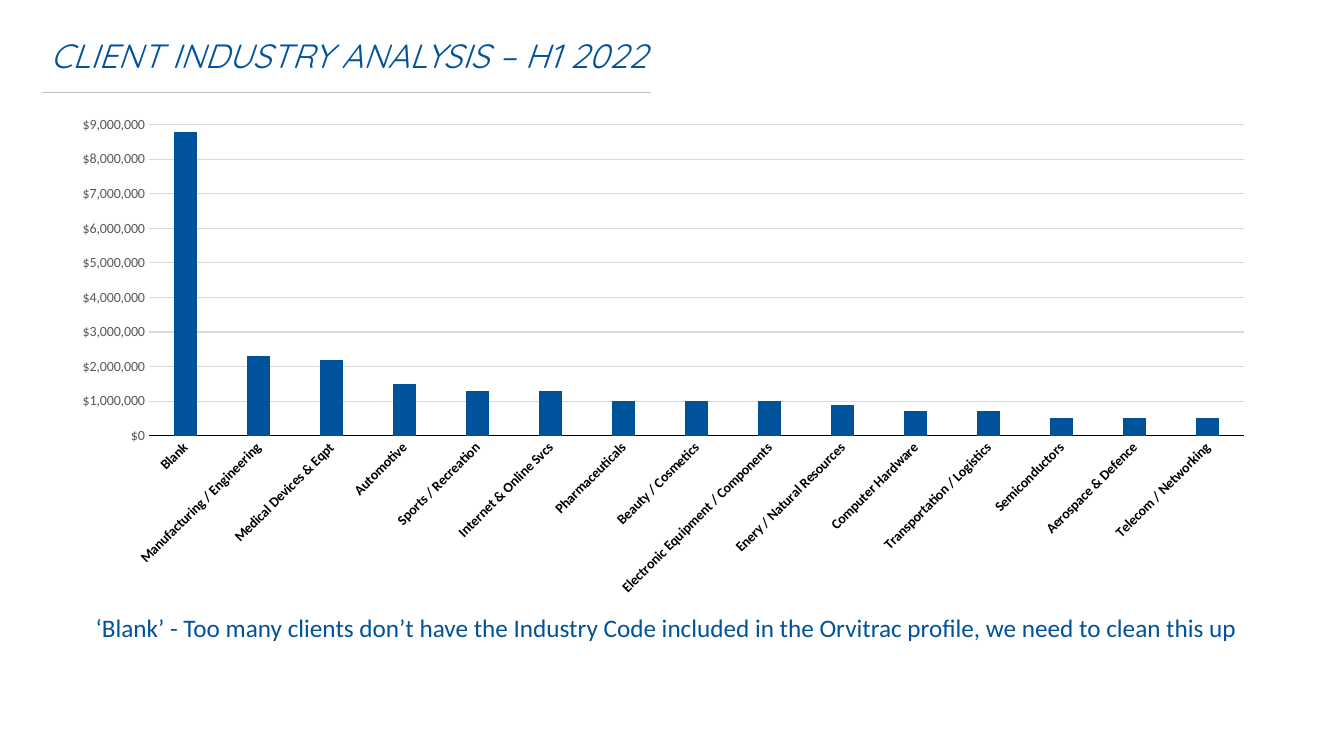
from dataclasses import dataclass
from typing import Any

import pptx
import pptx.chart.data
import pptx.dml.color
import pptx.enum.chart
import pptx.enum.shapes
import pptx.enum.text
import pptx.oxml.ns
import pptx.util
from pptx.util import Inches

COLORS = {
    "brand": "00529A",
    "rule": "BFBFBF",
    "grid": "D9D9D9",
    "amount": "595959",
    "ink": "000000",
}

REVENUE = {
    "Blank": 8800000,
    "Manufacturing / Engineering": 2300000,
    "Medical Devices & Eqpt": 2200000,
    "Automotive": 1500000,
    "Sports / Recreation": 1300000,
    "Internet & Online Svcs": 1300000,
    "Pharmaceuticals": 1000000,
    "Beauty / Cosmetics": 1000000,
    "Electronic Equipment / Components": 1000000,
    "Enery / Natural Resources": 900000,
    "Computer Hardware": 700000,
    "Transportation / Logistics": 700000,
    "Semiconductors": 500000,
    "Aerospace & Defence": 500000,
    "Telecom / Networking": 500000,
}


@dataclass(frozen=True)
class Caption:
    text: str
    at: tuple[float, float, float, float]
    font: dict[str, Any]
    frame: dict[str, Any]
    hanging: float = 0


CAPTIONS = [
    Caption(
        "CLIENT INDUSTRY ANALYSIS – H1 2022",
        (0.5, 0.33, 6.25, 0.42),
        {"name": "Quicksand", "size": pptx.util.Pt(24), "italic": True},
        {
            "word_wrap": True,
            "vertical_anchor": pptx.enum.text.MSO_ANCHOR.BOTTOM,
            "margin_left": 0,
            "margin_top": 0,
            "margin_right": 0,
            "margin_bottom": 0,
        },
        0.38,
    ),
    Caption(
        "‘Blank’ - Too many clients don’t have the Industry Code included "
        "in the Orvitrac profile, we need to clean this up",
        (0.85, 6.03, 11.73, 0.4),
        {"name": "Calibri", "size": pptx.util.Pt(18)},
        {
            "word_wrap": False,
            "auto_size": pptx.enum.text.MSO_AUTO_SIZE.SHAPE_TO_FIT_TEXT,
        },
    ),
]


def apply_format(target: Any, values: dict[str, Any]) -> None:
    for name, value in values.items():
        setattr(target, name, value)


def rgb(name: str) -> pptx.dml.color.RGBColor:
    return pptx.dml.color.RGBColor.from_string(COLORS[name])


def style_font(font: Any, color: str, values: dict[str, Any]) -> None:
    apply_format(font, values)
    font.color.rgb = rgb(color)


def style_line(line: Any, color: str, points: float) -> None:
    line.color.rgb = rgb(color)
    line.width = pptx.util.Pt(points)


def add_caption(slide: Any, caption: Caption) -> None:
    frame = slide.shapes.add_textbox(*map(Inches, caption.at)).text_frame
    apply_format(frame, caption.frame)
    paragraph = frame.paragraphs[0]
    if caption.hanging:
        properties = paragraph._p.get_or_add_pPr()
        properties.set("marL", str(Inches(caption.hanging)))
        properties.set("indent", str(-Inches(caption.hanging)))
    run = paragraph.add_run()
    run.text = caption.text
    style_font(run.font, "brand", caption.font)


def add_title_rule(slide: Any) -> None:
    rule = slide.shapes.add_connector(
        pptx.enum.shapes.MSO_CONNECTOR.STRAIGHT,
        *map(Inches, (0.42, 0.92, 6.46, 0.92)),
    )
    style_line(rule.line, "rule", 0.75)
    rule._element.spPr.append(pptx.oxml.parse_xml(
        f"<a:effectLst {pptx.oxml.ns.nsdecls('a')}/>"
    ))


def add_revenue_chart(slide: Any) -> None:
    revenue = pptx.chart.data.CategoryChartData(number_format='"$"#,##0')
    revenue.categories = list(REVENUE)
    revenue.add_series("Series 1", list(REVENUE.values()))
    chart = slide.shapes.add_chart(
        pptx.enum.chart.XL_CHART_TYPE.COLUMN_CLUSTERED,
        *map(Inches, (0.58, 1.06, 12, 4.95)),
        revenue,
    ).chart
    apply_format(chart, {"has_legend": False, "has_title": False})
    base_font = {"name": "Calibri", "size": pptx.util.Pt(10)}
    style_font(chart.font, "ink", base_font)

    columns = chart.plots[0]
    apply_format(columns, {"gap_width": 219, "overlap": -27, "vary_by_categories": False})
    fill = columns.series[0].format.fill
    fill.solid()
    fill.fore_color.rgb = rgb("brand")

    no_ticks = {
        "major_tick_mark": pptx.enum.chart.XL_TICK_MARK.NONE,
        "minor_tick_mark": pptx.enum.chart.XL_TICK_MARK.NONE,
    }
    industries = chart.category_axis
    apply_format(industries, no_ticks)
    style_font(industries.tick_labels.font, "ink", base_font | {"bold": True})
    style_line(industries.format.line, "ink", 1)
    label_body = industries._element.txPr.find(pptx.oxml.ns.qn("a:bodyPr"))
    label_body.set("rot", str(-45 * 60000))
    label_body.set("vert", "horz")

    amounts = chart.value_axis
    apply_format(amounts, no_ticks | {
        "minimum_scale": 0,
        "maximum_scale": 9000000,
        "major_unit": 1000000,
        "has_major_gridlines": True,
    })
    apply_format(amounts.tick_labels, {
        "number_format": '"$"#,##0',
        "number_format_is_linked": False,
    })
    style_font(amounts.tick_labels.font, "amount", base_font)
    amounts.format.line.fill.background()
    style_line(amounts.major_gridlines.format.line, "grid", 0.75)


def main() -> None:
    deck = pptx.Presentation()
    apply_format(deck, {"slide_width": Inches(13.33), "slide_height": Inches(7.5)})
    slide = deck.slides.add_slide(deck.slide_layouts[6])
    title, note = CAPTIONS
    add_caption(slide, title)
    add_title_rule(slide)
    add_revenue_chart(slide)
    add_caption(slide, note)
    deck.save("out.pptx")


if __name__ == "__main__":
    main()
